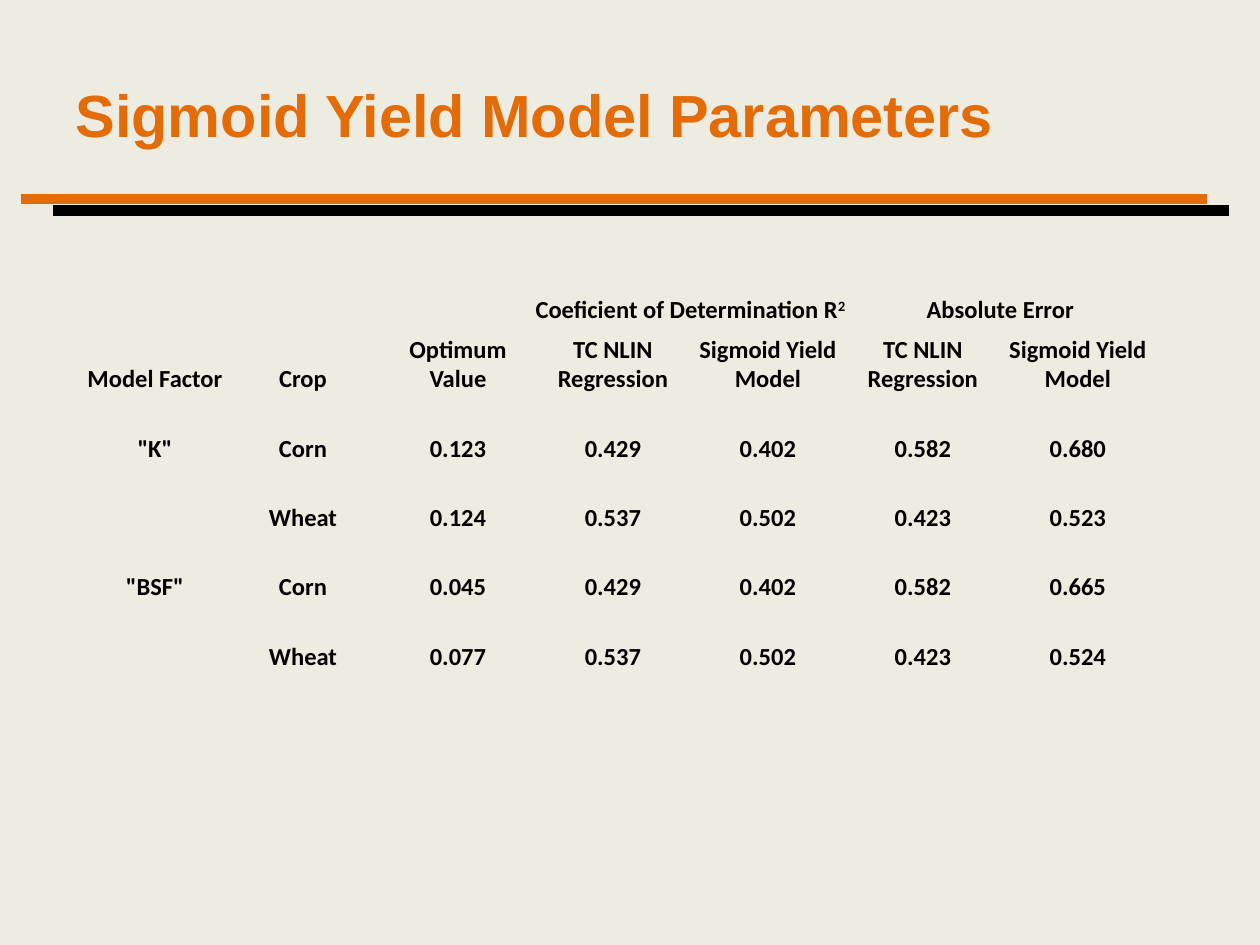
from dataclasses import dataclass

from lxml.etree import SubElement
from pptx import Presentation
from pptx.dml.color import RGBColor
from pptx.enum.shapes import MSO_CONNECTOR
from pptx.enum.text import MSO_ANCHOR, PP_ALIGN
from pptx.oxml.ns import qn
from pptx.slide import Slide
from pptx.table import Table, _Cell
from pptx.util import Inches, Pt

ORANGE = RGBColor(0xE3, 0x6C, 0x09)
BLACK = RGBColor(0, 0, 0)
CREAM = RGBColor(0xEE, 0xEC, 0xE1)
PLAIN = "{2D5ABB26-0587-4C30-8999-92F81FD0307C}"
WIDTHS = [1.12] + [1.23] * 6
HEIGHTS = [0.58] + [0.55] * 5
PAIR = ["TC NLIN Regression", "Sigmoid Yield Model"]
ROWS = [
    ["", "", "", "Coeficient of Determination R", "", "Absolute Error", ""],
    ["Model Factor", "Crop", "Optimum Value", *PAIR, *PAIR],
    ['"K"', "Corn", "0.123", "0.429", "0.402", "0.582", "0.680"],
    ["", "Wheat", "0.124", "0.537", "0.502", "0.423", "0.523"],
    ['"BSF"', "Corn", "0.045", "0.429", "0.402", "0.582", "0.665"],
    ["", "Wheat", "0.077", "0.537", "0.502", "0.423", "0.524"],
]


@dataclass
class Rule:
    left: float
    right: float
    y: float
    color: RGBColor


RULES = [Rule(0.17, 9.58, 1.58, ORANGE), Rule(0.42, 9.75, 1.67, BLACK)]


def draw_rule(slide: Slide, rule: Rule) -> None:
    line = slide.shapes.add_connector(
        MSO_CONNECTOR.STRAIGHT, Inches(rule.left), Inches(rule.y),
        Inches(rule.right), Inches(rule.y))
    line.line.color.rgb = rule.color
    line.line.width = Pt(6)
    SubElement(line._element.spPr, qn("a:effectLst"))


def draw_title(slide: Slide, text: str) -> None:
    title = slide.shapes.title
    title.left, title.top = Inches(0.5), Inches(0.3)
    title.width, title.height = Inches(7.92), Inches(1.2)
    frame = title.text_frame
    frame.text = text
    frame.word_wrap = True
    frame.vertical_anchor = MSO_ANCHOR.MIDDLE
    frame.paragraphs[0].alignment = PP_ALIGN.LEFT
    font = frame.paragraphs[0].runs[0].font
    font.name, font.size, font.bold = "Arial", Pt(34), True
    font.color.rgb = ORANGE


def fill_cell(cell: _Cell, text: str) -> None:
    cell.fill.background()
    cell.margin_left = cell.margin_right = 0
    cell.margin_top = cell.margin_bottom = 0
    cell.vertical_anchor = MSO_ANCHOR.BOTTOM
    para = cell.text_frame.paragraphs[0]
    para.text = text
    para.alignment = PP_ALIGN.CENTER
    if text.endswith(" R"):
        power = para.add_run()
        power.text = "2"
        power._r.get_or_add_rPr().set("baseline", "30000")
    for run in para.runs:
        font = run.font
        font.name, font.size, font.bold = "Calibri", Pt(14), True
        font.color.rgb = BLACK


def draw_table(slide: Slide) -> Table:
    table = slide.shapes.add_table(
        len(HEIGHTS), len(WIDTHS), Inches(0.67), Inches(2),
        Inches(sum(WIDTHS)), Inches(sum(HEIGHTS))).table
    table.first_row = table.horz_banding = False
    table._tbl.tblPr.find(qn("a:tableStyleId")).text = PLAIN
    for col, width in zip(table.columns, WIDTHS):
        col.width = Inches(width)
    for row, height, texts in zip(table.rows, HEIGHTS, ROWS):
        row.height = Inches(height)
        for cell, text in zip(row.cells, texts):
            fill_cell(cell, text)
    for col in (3, 5):
        table.cell(0, col).merge(table.cell(0, col + 1))
    return table


def main() -> None:
    deck = Presentation()
    deck.slide_width, deck.slide_height = Inches(10), Inches(7.5)
    slide = deck.slides.add_slide(deck.slide_layouts[5])
    slide.background.fill.solid()
    slide.background.fill.fore_color.rgb = CREAM
    for rule in RULES:
        draw_rule(slide, rule)
    draw_title(slide, "Sigmoid Yield Model Parameters")
    draw_table(slide)
    deck.save("out.pptx")


if __name__ == "__main__":
    main()
